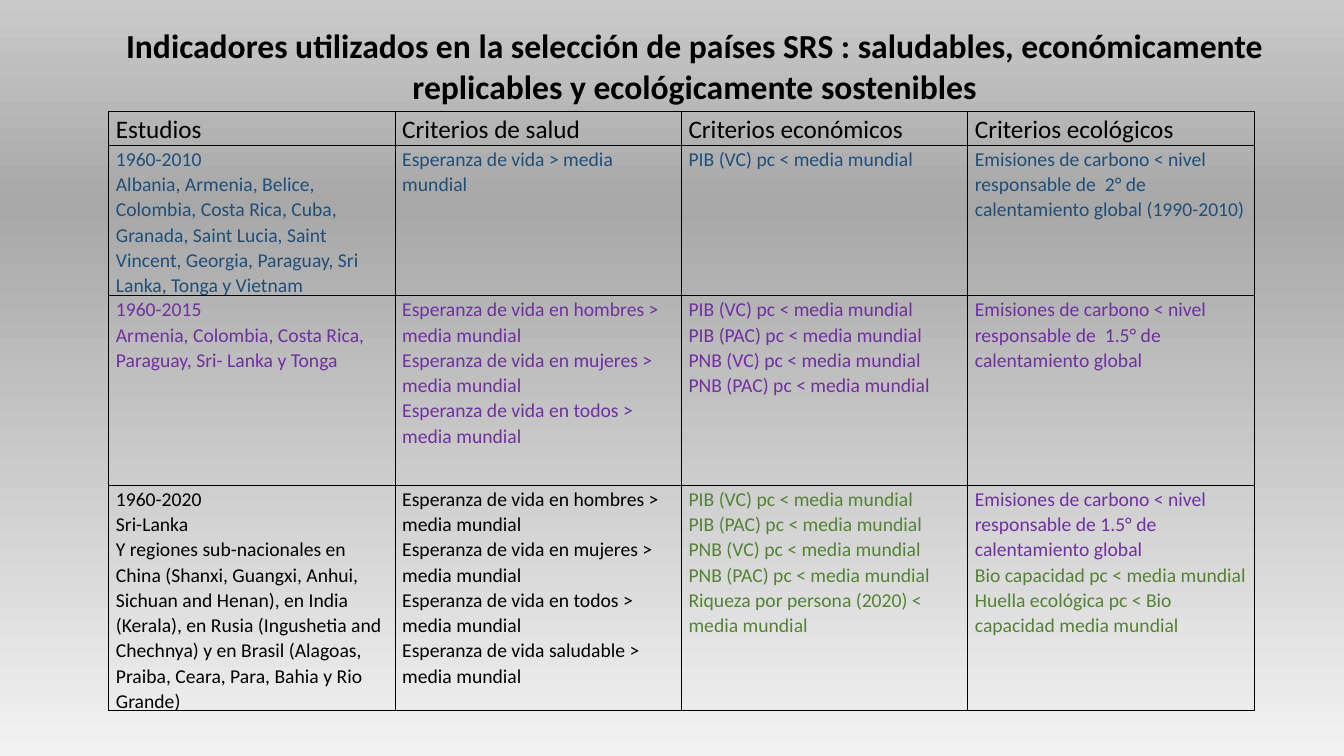
from copy import deepcopy
from dataclasses import dataclass

from pptx import Presentation
from pptx.dml.color import RGBColor
from pptx.enum import text
from pptx.oxml import parse_xml
from pptx.oxml.ns import nsdecls, qn
from pptx.util import Inches, Pt

FONT = "Calibri"
BLACK, BLUE, PURPLE, GREEN = "000000", "1F4E79", "7030A0", "548235"
BACKGROUND_STOPS = [(0, "F2F2F2"), (0.73, "A8A8A8"), (1, "C9C9C9")]
COLUMN_WIDTH = 2.84


@dataclass
class Entry:
    """Consecutive paragraphs of one cell that share a colour."""
    colour: str
    lines: list[str]


@dataclass
class Row:
    height: float
    size: int
    cells: list[list[Entry]]


LIFE = [f"Esperanza de vida en {group} > media mundial"
        for group in ("hombres", "mujeres", "todos")]
INCOME = [f"{measure} pc < media mundial"
          for measure in ("PIB (VC)", "PIB (PAC)", "PNB (VC)", "PNB (PAC)")]
TITLE = ("Indicadores utilizados en la selección de países SRS : saludables, "
         "económicamente replicables y ecológicamente sostenibles")

ROWS = [
    Row(0.33, 18, [[Entry(BLACK, [heading])] for heading in (
        "Estudios", "Criterios de salud", "Criterios económicos", "Criterios ecológicos")]),
    Row(1.49, 14, [
        [Entry(BLUE, ["1960-2010",
                      "Albania, Armenia, Belice, Colombia, Costa Rica, Cuba, Granada, "
                      "Saint Lucia, Saint Vincent, Georgia, Paraguay, Sri Lanka, "
                      "Tonga y Vietnam"])],
        [Entry(BLUE, ["Esperanza de vida > media mundial"])],
        [Entry(BLUE, INCOME[:1])],
        [Entry(BLUE, ["Emisiones de carbono < nivel responsable de  2° de "
                      "calentamiento global (1990-2010)"])],
    ]),
    Row(1.88, 14, [
        [Entry(PURPLE, ["1960-2015",
                        "Armenia, Colombia, Costa Rica, Paraguay, Sri- Lanka y Tonga"])],
        [Entry(PURPLE, LIFE)],
        [Entry(PURPLE, INCOME)],
        [Entry(PURPLE, ["Emisiones de carbono < nivel responsable de  1.5° de "
                        "calentamiento global"])],
    ]),
    Row(2.23, 14, [
        [Entry(BLACK, ["1960-2020", "Sri-Lanka",
                       "Y regiones sub-nacionales en China (Shanxi, Guangxi, Anhui, "
                       "Sichuan and Henan), en India (Kerala), en Rusia (Ingushetia and "
                       "Chechnya) y en Brasil (Alagoas, Praiba, Ceara, Para, Bahia y "
                       "Rio Grande)"])],
        [Entry(BLACK, LIFE + ["Esperanza de vida saludable > media mundial"])],
        [Entry(GREEN, INCOME + ["Riqueza por persona (2020) < media mundial"])],
        [Entry(PURPLE, ["Emisiones de carbono < nivel responsable de 1.5° de "
                        "calentamiento global"]),
         Entry(GREEN, ["Bio capacidad pc < media mundial",
                       "Huella ecológica pc < Bio capacidad media mundial"])],
    ]),
]


def rgb(colour: str) -> RGBColor:
    return RGBColor.from_string(colour)


def add_run(paragraph, wording: str, size: int, colour: str, bold: bool = False) -> None:
    run = paragraph.add_run()
    run.text = wording
    run.font.name, run.font.size, run.font.bold = FONT, Pt(size), bold
    run.font.color.rgb = rgb(colour)


def paint_background(slide) -> None:
    fill = slide.background.fill
    fill.gradient()
    fill.gradient_angle = 90
    stop_list = slide.element.find(".//" + qn("a:gsLst"))
    stop_list.append(deepcopy(stop_list[-1]))
    for stop, (position, colour) in zip(fill.gradient_stops, BACKGROUND_STOPS):
        stop.position = position
        stop.color.rgb = rgb(colour)


def write_title(slide) -> None:
    title = slide.shapes.title
    title.left, title.top = Inches(1), Inches(0.2)
    title.width, title.height = Inches(11.78), Inches(0.91)
    frame = title.text_frame
    frame.word_wrap = True
    frame.auto_size = text.MSO_AUTO_SIZE.SHAPE_TO_FIT_TEXT
    frame.vertical_anchor = text.MSO_ANCHOR.TOP
    paragraph = frame.paragraphs[0]
    paragraph.alignment = text.PP_ALIGN.CENTER
    add_run(paragraph, TITLE, 24, BLACK, bold=True)


def add_borders(cell) -> None:
    properties = cell._tc.get_or_add_tcPr()
    for index, side in enumerate(("lnL", "lnR", "lnT", "lnB")):
        properties.insert(index, parse_xml(
            f'<a:{side} {nsdecls("a")} w="{Pt(1)}"><a:solidFill>'
            f'<a:srgbClr val="{BLACK}"/></a:solidFill></a:{side}>'))


def fill_cell(cell, entries: list[Entry], size: int) -> None:
    cell.margin_left = cell.margin_right = Inches(0.07)
    cell.margin_top, cell.margin_bottom = Inches(0.01), 0
    cell.fill.background()
    add_borders(cell)
    lines = [(line, entry.colour) for entry in entries for line in entry.lines]
    frame = cell.text_frame
    for index, (line, colour) in enumerate(lines):
        paragraph = frame.add_paragraph() if index else frame.paragraphs[0]
        paragraph.line_spacing = 1.06
        add_run(paragraph, line, size, colour)


def add_criteria(slide) -> None:
    column_count = len(ROWS[0].cells)
    criteria = slide.shapes.add_table(
        len(ROWS), column_count, Inches(1.08), Inches(1.11),
        Inches(COLUMN_WIDTH * column_count),
        Inches(sum(row.height for row in ROWS))).table
    criteria.first_row = criteria.horz_banding = False
    for column in criteria.columns:
        column.width = Inches(COLUMN_WIDTH)
    for study, table_row in zip(ROWS, criteria.rows):
        table_row.height = Inches(study.height)
        for entries, cell in zip(study.cells, table_row.cells):
            fill_cell(cell, entries, study.size)


def main() -> None:
    presentation = Presentation()
    presentation.slide_width, presentation.slide_height = Inches(13.33), Inches(7.5)
    slide = presentation.slides.add_slide(presentation.slide_layouts[5])
    paint_background(slide)
    write_title(slide)
    add_criteria(slide)
    presentation.save("out.pptx")


if __name__ == "__main__":
    main()
